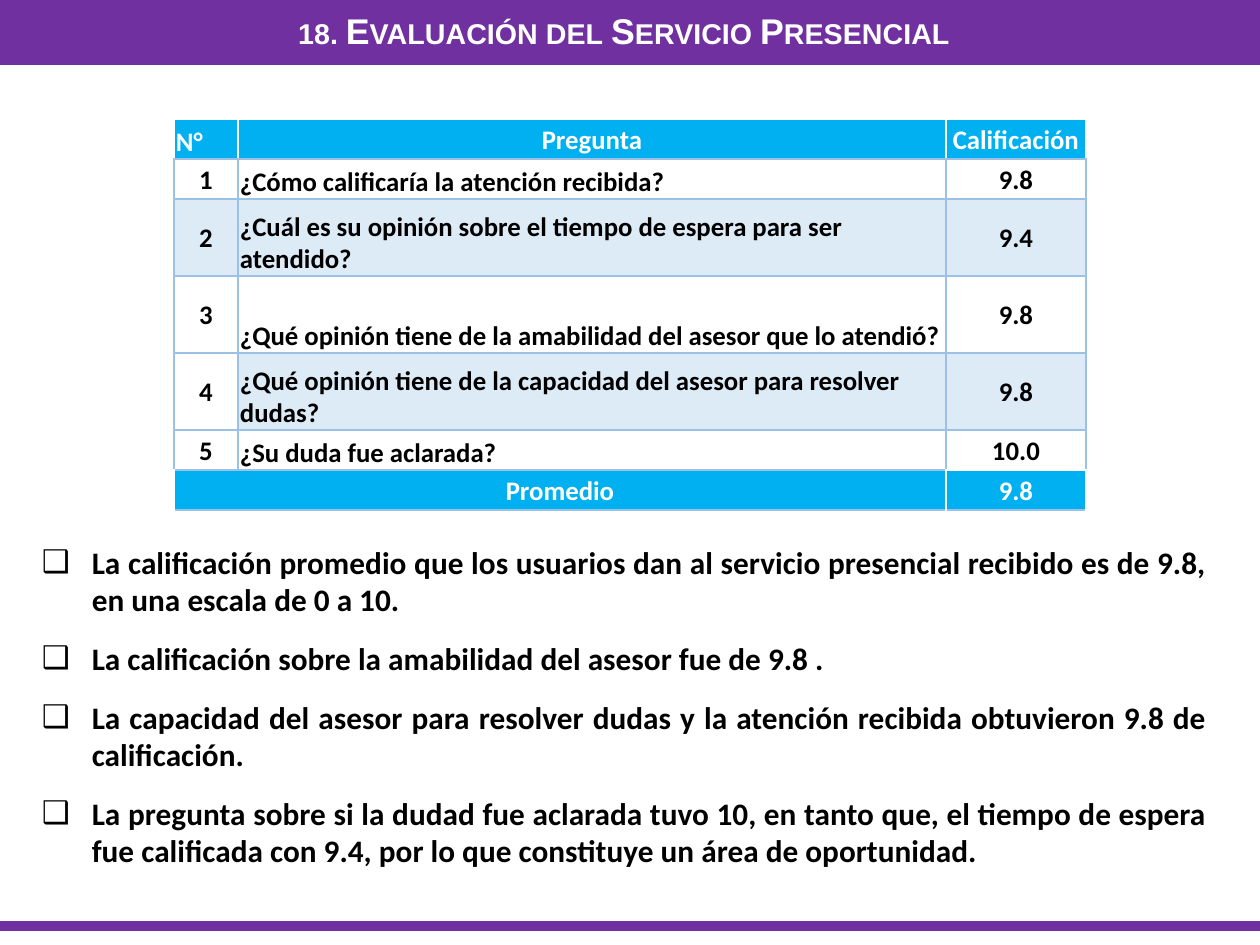
from pptx import Presentation
from pptx.dml.color import RGBColor
from pptx.enum.shapes import MSO_CONNECTOR, MSO_SHAPE
from pptx.enum.text import MSO_ANCHOR as ANCHOR, PP_ALIGN as ALIGN
from pptx.oxml import parse_xml
from pptx.oxml.ns import nsdecls
from pptx.util import Pt

PX = 5690
PURPLE, CYAN, BLUE, PALE = "7030A0", "00B0F0", "9BC2E6", "DDEBF7"
WHITE, BLACK = "FFFFFF", "000000"


def color(value):
    return RGBColor.from_string(value)


def add_run(p, text, size, font, rgb):
    r = p.add_run()
    r.text = text
    r.font.size, r.font.name, r.font.bold = Pt(size), font, True
    r.font.color.rgb = color(rgb)
    return r


prs = Presentation()
prs.slide_width, prs.slide_height = 1260 * PX, 945 * PX
s = prs.slides.add_slide(prs.slide_layouts[5])

# Purple bands
line = s.shapes.add_connector(MSO_CONNECTOR.STRAIGHT, -3 * PX, 926 * PX, 1263 * PX, 926 * PX)
line.line.color.rgb, line.line.width = color(PURPLE), Pt(4.5)
line._element.spPr.append(parse_xml(f"<a:effectLst {nsdecls('a')}/>"))
band = s.shapes.add_shape(MSO_SHAPE.RECTANGLE, -2 * PX, 0, 1262 * PX, 65 * PX)
band.shadow.inherit = False
band.fill.solid()
band.fill.fore_color.rgb = color(PURPLE)
band.line.fill.background()

# Title, brought in front of the band
title = s.shapes.title
title.left, title.top, title.width, title.height = -2 * PX, 0, 1252 * PX, 60 * PX
s.shapes._spTree.append(title._element)
tf = title.text_frame
tf.vertical_anchor = ANCHOR.MIDDLE
p = tf.paragraphs[0]
p.alignment = ALIGN.CENTER
r = add_run(p, "18. Evaluación del Servicio Presencial", 16, "Arial", WHITE)
rPr = r.font._element
rPr.set("cap", "small")
rPr.find("{*}solidFill").addnext(parse_xml(
    f'<a:effectLst {nsdecls("a")}><a:outerShdw blurRad="38100" dist="38100" dir="2700000">'
    '<a:srgbClr val="000000"><a:alpha val="43000"/></a:srgbClr></a:outerShdw></a:effectLst>'))

# Ratings table
rows = [
    ("N°", "Pregunta", "Calificación"),
    ("1", "¿Cómo calificaría la atención recibida?", "9.8"),
    ("2", "¿Cuál es su opinión sobre el tiempo de espera para ser atendido?", "9.4"),
    ("3", "¿Qué opinión tiene de la amabilidad del asesor que lo atendió?", "9.8"),
    ("4", "¿Qué opinión tiene de la capacidad del asesor para resolver dudas?", "9.8"),
    ("5", "¿Su duda fue aclarada?", "10.0"),
    ("Promedio", "", "9.8"),
]
last = len(rows) - 1
table = s.shapes.add_table(len(rows), 3, 174 * PX, 119 * PX, 912 * PX, 391 * PX).table
table.first_row = table.horz_banding = False
for col, width in zip(table.columns, (64, 708, 140)):
    col.width = width * PX
for row, height in zip(table.rows, (40, 40, 77, 77, 77, 40, 40)):
    row.height = height * PX
table.cell(last, 0).merge(table.cell(last, 1))

for i, row in enumerate(rows):
    for j, text in enumerate(row):
        cell = table.cell(i, j)
        edge = i in (0, last)
        side = WHITE if edge else BLUE
        top = WHITE if i == 0 or (i, j) == (last, 2) else BLUE
        bottom = WHITE if (i, j) == (last - 1, 2) else BLUE
        tcPr = cell._tc.get_or_add_tcPr()
        for tag, rgb in zip(("lnL", "lnR", "lnT", "lnB"), (side, side, top, bottom)):
            tcPr.append(parse_xml(
                f'<a:{tag} {nsdecls("a")} w="12700"><a:solidFill><a:srgbClr val="{rgb}"/>'
                f'</a:solidFill></a:{tag}>'))
        banded = i in (2, 4) and (i, j) != (4, 0)
        cell.fill.solid()
        cell.fill.fore_color.rgb = color(CYAN if edge else PALE if banded else WHITE)
        cell.margin_left = cell.margin_right = cell.margin_top = 2 * PX
        cell.margin_bottom = 0
        low = (i, j) == (0, 0) or (j == 1 and not edge)
        cell.vertical_anchor = ANCHOR.BOTTOM if low else ANCHOR.MIDDLE
        if text:
            p = cell.text_frame.paragraphs[0]
            p.alignment = ALIGN.LEFT if low else ALIGN.CENTER
            add_run(p, text, 12, "Calibri", WHITE if edge else BLACK)

# Findings
findings = [
    "La calificación promedio que los usuarios dan al servicio presencial recibido es de 9.8, "
    "en una escala de 0 a 10.",
    "La calificación sobre la amabilidad del asesor fue de 9.8 .",
    "La capacidad del asesor para resolver dudas y la atención recibida obtuvieron 9.8 de "
    "calificación.",
    "La pregunta sobre si la dudad fue aclarada tuvo 10, en tanto que, el tiempo de espera "
    "fue calificada con 9.4, por lo que constituye un área de oportunidad.",
]
tf = s.shapes.add_textbox(26 * PX, 535 * PX, 1197 * PX, 346 * PX).text_frame
tf.word_wrap = True
for i, text in enumerate(findings):
    p = tf.paragraphs[0] if i == 0 else tf.add_paragraph()
    p.alignment = ALIGN.JUSTIFY
    if i:
        p.space_before = Pt(9.5)
    pPr = p._p.get_or_add_pPr()
    pPr.set("marL", str(50 * PX))
    pPr.set("indent", str(-50 * PX))
    pPr.append(parse_xml(f'<a:buFont {nsdecls("a")} typeface="Arial"/>'))
    pPr.append(parse_xml(f'<a:buChar {nsdecls("a")} char="❑"/>'))
    add_run(p, text, 14, "Calibri", BLACK)

prs.save("out.pptx")
